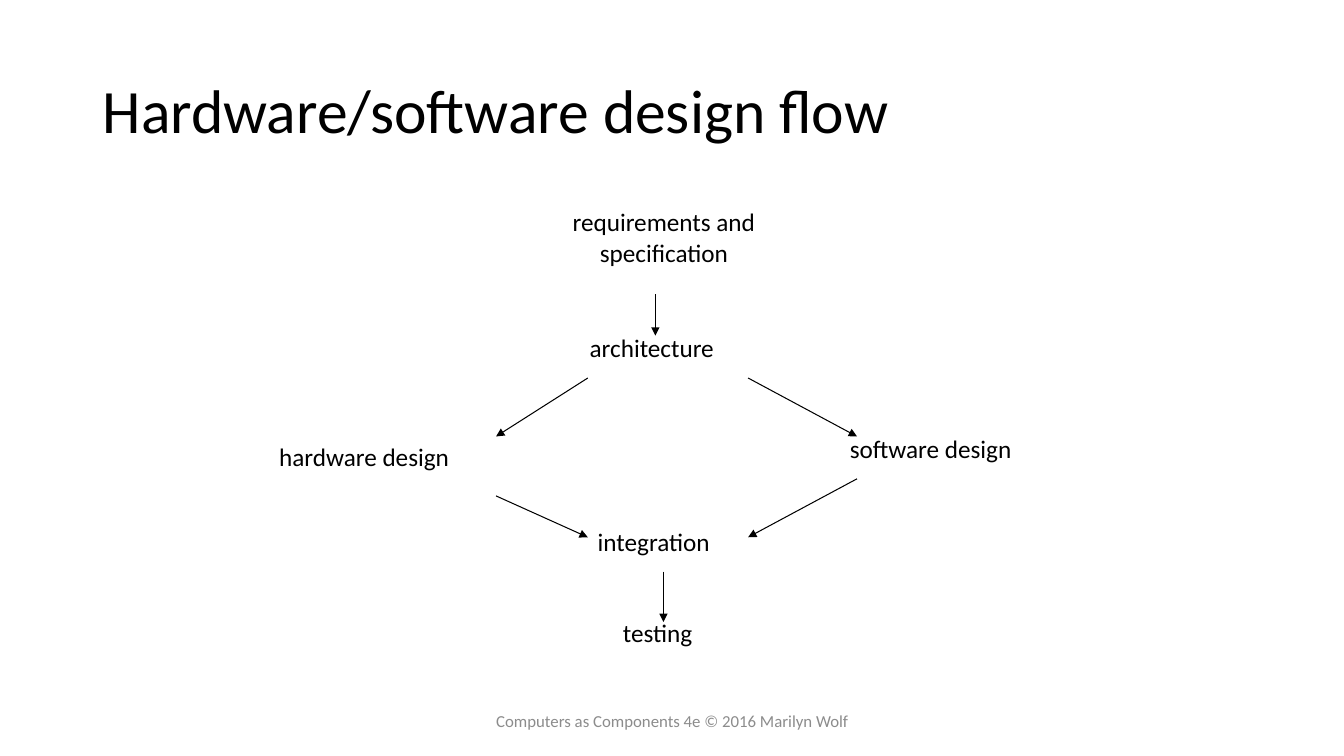
from lxml.etree import SubElement
from pptx import Presentation
from pptx.dml.color import RGBColor
from pptx.enum.shapes import MSO_CONNECTOR
from pptx.enum.text import MSO_ANCHOR, MSO_AUTO_SIZE, PP_ALIGN
from pptx.oxml.ns import qn
from pptx.util import Inches, Pt


def color(value):
    return RGBColor.from_string(value)


def add_text(page, text, left, top, width, height, size=18, fill="000000",
             align=PP_ALIGN.LEFT, anchor=MSO_ANCHOR.TOP, wrap=False, spacing=1.0):
    box = page.shapes.add_textbox(Inches(left), Inches(top), Inches(width), Inches(height))
    frame = box.text_frame
    frame.word_wrap = wrap
    frame.auto_size = MSO_AUTO_SIZE.NONE if wrap else MSO_AUTO_SIZE.SHAPE_TO_FIT_TEXT
    frame.vertical_anchor = anchor
    for index, line in enumerate(text.split("\n")):
        para = frame.paragraphs[0] if index == 0 else frame.add_paragraph()
        para.alignment = align
        para.line_spacing = spacing
        span = para.add_run()
        span.text = line
        span.font.name = "Calibri"
        span.font.size = Pt(size)
        span.font.color.rgb = color(fill)


deck = Presentation()
deck.slide_width = Inches(13.33)
deck.slide_height = Inches(7.5)
page = deck.slides.add_slide(deck.slide_layouts[6])

add_text(page, "Hardware/software design flow", 0.92, 0.4, 11.5, 1.45,
         size=44, anchor=MSO_ANCHOR.MIDDLE, wrap=True, spacing=0.9)
add_text(page, "requirements and\nspecification", 5.57, 2, 2.03, 0.71, align=PP_ALIGN.CENTER)

steps = [
    ("architecture", 5.75, 3.25, 1.45),
    ("hardware design", 2.67, 4.33, 1.91),
    ("software design", 8.33, 4.25, 1.83),
    ("integration", 5.83, 5.17, 1.33),
    ("testing", 6.08, 6.08, 0.9),
]
for name, left, top, width in steps:
    add_text(page, name, left, top, width, 0.4)

arrows = [
    (6.5, 2.92, 6.5, 3.33),
    (5.83, 3.75, 4.92, 4.33),
    (7.42, 3.75, 8.5, 4.33),
    (4.92, 4.92, 5.83, 5.33),
    (8.5, 4.75, 7.42, 5.33),
    (6.58, 5.67, 6.58, 6.17),
]
for ends in arrows:
    arrow = page.shapes.add_connector(MSO_CONNECTOR.STRAIGHT, *map(Inches, ends))
    arrow.line.width = Pt(0.75)
    arrow.line.color.rgb = color("000000")
    SubElement(arrow.line._get_or_add_ln(), qn("a:tailEnd"), type="triangle")
    SubElement(arrow._element.spPr, qn("a:effectLst"))

add_text(page, "Computers as Components 4e © 2016 Marilyn Wolf", 4.42, 6.95, 4.5, 0.4,
         size=12, fill="8C8C8C", align=PP_ALIGN.CENTER, anchor=MSO_ANCHOR.MIDDLE, wrap=True)

deck.save("out.pptx")
